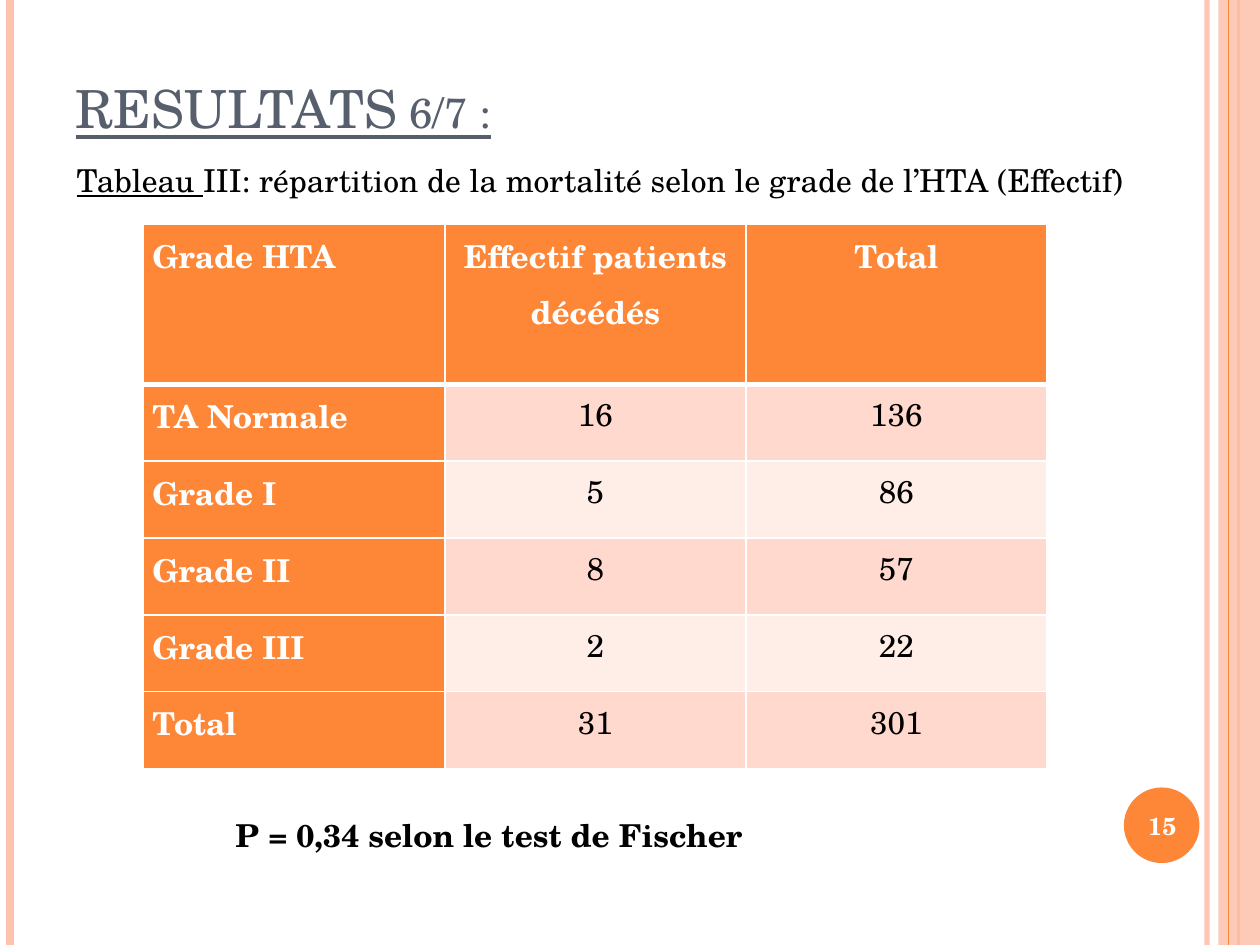
"""Build the results slide showing mortality by hypertension grade."""
from typing import NamedTuple

from lxml.etree import SubElement
from pptx import Presentation
from pptx.dml.color import RGBColor
from pptx.enum.shapes import MSO_CONNECTOR, MSO_SHAPE
from pptx.enum.text import MSO_ANCHOR, PP_ALIGN
from pptx.oxml.ns import qn
from pptx.util import Inches, Pt

FONT = "TeX Gyre Schola"
COLORS = {
    "orange": "FE8637", "peach": "FEC3AE", "band_dark": "FFD9CE",
    "band_light": "FFEDE8", "slate": "575F6D", "white": "FFFFFF", "black": "000000",
}


class Stripe(NamedTuple):
    x: float
    color: str
    width: float
    opacity: int = 100


class Label(NamedTuple):
    runs: tuple[str, ...]
    left: float
    top: float
    width: float
    height: float
    size: int = 18
    color: str = "black"
    bold: bool = False
    centered: bool = False


STRIPES = (
    Stripe(9.58, "peach", 3, 93),
    Stripe(0.08, "peach", 4.5),
    Stripe(9.83, "orange", 1.5),
    Stripe(9.75, "orange", 0.75),
)
CAPTION = Label(
    ("Tableau ", "III: répartition de la mortalité selon le grade de l’HTA (Effectif)"),
    0.51, 1.23, 8.53, 0.4,
)
TEST_RESULT = Label(("P = 0,34 selon le test de Fischer",), 1.77, 6.43, 4.27, 0.4, bold=True)
PAGE_NUMBER = Label(("15",), 8.89, 6.27, 0.67, 0.57, 14, "white", True, True)
ROWS = (
    ("Grade HTA", "Effectif patients décédés", "Total"),
    ("TA Normale", "16", "136"),
    ("Grade I", "5", "86"),
    ("Grade II", "8", "57"),
    ("Grade III", "2", "22"),
    ("Total", "31", "301"),
)


def rgb(name: str) -> RGBColor:
    return RGBColor.from_string(COLORS[name])


def style_font(font, size: float, color: str, bold: bool = False) -> None:
    font.name, font.size, font.bold = FONT, Pt(size), bold
    font.color.rgb = rgb(color)


def set_opacity(element, percent: int) -> None:
    color = next(element.iter(qn("a:srgbClr")))
    SubElement(color, qn("a:alpha"), val=str(percent * 1000))


def add_stripe(slide, stripe: Stripe) -> None:
    x = Inches(stripe.x)
    connector = slide.shapes.add_connector(MSO_CONNECTOR.STRAIGHT, x, 0, x, Inches(7.5))
    connector.line.color.rgb = rgb(stripe.color)
    connector.line.width = Pt(stripe.width)
    properties = connector._element.spPr
    if stripe.opacity < 100:
        set_opacity(properties, stripe.opacity)
    SubElement(properties, qn("a:effectLst"))


def add_filled_shape(slide, kind, left: float, top: float, width: float, height: float, color: str):
    shape = slide.shapes.add_shape(kind, Inches(left), Inches(top), Inches(width), Inches(height))
    shape.shadow.inherit = False
    shape.fill.solid()
    shape.fill.fore_color.rgb = rgb(color)
    shape.line.fill.background()
    return shape


def add_label(slide, label: Label):
    box = slide.shapes.add_textbox(
        Inches(label.left), Inches(label.top), Inches(label.width), Inches(label.height))
    box.text_frame.word_wrap = label.centered
    paragraph = box.text_frame.paragraphs[0]
    if label.centered:
        box.text_frame.vertical_anchor = MSO_ANCHOR.MIDDLE
        paragraph.alignment = PP_ALIGN.CENTER
    for text in label.runs:
        run = paragraph.add_run()
        run.text = text
        style_font(run.font, label.size, label.color, label.bold)
    return paragraph


def set_title(slide) -> None:
    title = slide.shapes.title
    title.left, title.top = Inches(0.5), Inches(0.3)
    title.width, title.height = Inches(8.17), Inches(1.25)
    frame = title.text_frame
    frame.text = "RESULTATS 6/7\u00a0:".replace("\u00a0", " ")
    frame.vertical_anchor = MSO_ANCHOR.BOTTOM
    frame.margin_bottom = Inches(0.45)
    paragraph = frame.paragraphs[0]
    paragraph.alignment = PP_ALIGN.LEFT
    font = paragraph.runs[0].font
    style_font(font, 30, "slate")
    font.underline = True
    font._element.set("cap", "small")


def set_borders(cell, bottom_width: float) -> None:
    properties = cell._tc.get_or_add_tcPr()
    widths = {"a:lnL": 1, "a:lnR": 1, "a:lnT": 1, "a:lnB": bottom_width}
    for index, (tag, width) in enumerate(widths.items()):
        line = SubElement(properties, qn(tag), w=str(Pt(width)))
        fill = SubElement(line, qn("a:solidFill"))
        SubElement(fill, qn("a:srgbClr"), val=COLORS["white"])
        properties.insert(index, line)


def fill_cell(cell, text: str, row: int, column: int) -> None:
    is_header = row == 0 or column == 0
    band = "band_dark" if row % 2 else "band_light"
    cell.fill.solid()
    cell.fill.fore_color.rgb = rgb("orange" if is_header else band)
    cell.margin_left = cell.margin_right = Inches(0.07)
    cell.margin_top = cell.margin_bottom = 0
    cell.text_frame.text = text
    paragraph = cell.text_frame.paragraphs[0]
    paragraph.line_spacing = 1.15
    paragraph.alignment = PP_ALIGN.CENTER if column else PP_ALIGN.LEFT
    style_font(paragraph.runs[0].font, 18, "white" if is_header else "black", is_header)
    set_borders(cell, 1 if row else 3)


def add_mortality_table(slide) -> None:
    table = slide.shapes.add_table(
        len(ROWS), len(ROWS[0]), Inches(1.14), Inches(1.78), Inches(7.17), Inches(4.33)).table
    for column in table.columns:
        column.width = Inches(2.39)
    for row_index, values in enumerate(ROWS):
        table.rows[row_index].height = Inches(0.61 if row_index else 1.27)
        for column_index, text in enumerate(values):
            fill_cell(table.cell(row_index, column_index), text, row_index, column_index)


def main() -> None:
    presentation = Presentation()
    presentation.slide_width, presentation.slide_height = Inches(10), Inches(7.5)
    slide = presentation.slides.add_slide(presentation.slide_layouts[5])
    for stripe in STRIPES[:3]:
        add_stripe(slide, stripe)
    side_band = add_filled_shape(slide, MSO_SHAPE.RECTANGLE, 9.67, 0, 0.33, 7.5, "peach")
    set_opacity(side_band._element.spPr, 87)
    add_stripe(slide, STRIPES[3])
    add_filled_shape(slide, MSO_SHAPE.OVAL, 8.92, 6.25, 0.6, 0.6, "orange")
    set_title(slide)
    add_label(slide, PAGE_NUMBER)
    caption = add_label(slide, CAPTION)
    caption.runs[0].font.underline = True
    add_mortality_table(slide)
    add_label(slide, TEST_RESULT)
    presentation.save("out.pptx")


if __name__ == "__main__":
    main()
